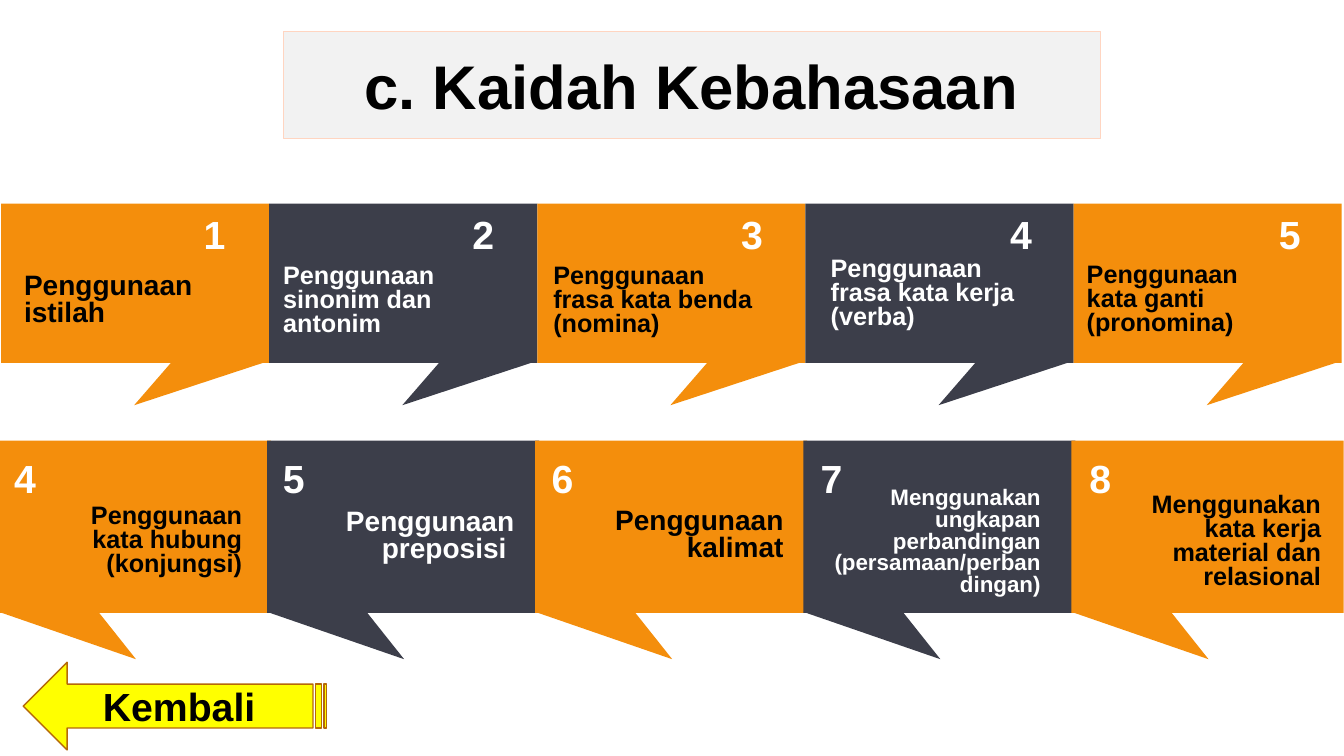
"""Builds the slide on language rules: two rows of numbered speech cards, a title and a back arrow."""
from dataclasses import dataclass

from pptx import Presentation
from pptx import util as u
from pptx.dml.color import RGBColor
from pptx.enum import shapes, text

WIDTH, HEIGHT = u.Inches(13.33), u.Inches(7.5)
ORANGE, SLATE, BLACK, WHITE = "F48E0C", "3C3E4A", "000000", "FFFFFF"
CARD_PITCH, NUMBER_PITCH, CAPTION_WIDTH = 19.95, 20, 16.88


@dataclass
class Area:
    """A rectangle in percent of the slide's width and height."""
    left: float
    top: float
    width: float
    height: float

    def box(self) -> tuple[int, int, int, int]:
        """Return the rectangle in slide units."""
        return across(self.left), down(self.top), across(self.width), down(self.height)


@dataclass
class Caption:
    """The wording of one card and where it stands."""
    words: str
    left: float
    top: float
    height: float
    size: int = 18


@dataclass
class Row:
    """A row of cards that share tail, numbering and alignment."""
    first_card: Area
    tail: list[tuple[float, float]]
    first_number: int
    number_left: float
    number_top: float
    align: text.PP_ALIGN
    captions: list[Caption]


ROWS = [
    Row(Area(0.08, 26.93, 19.95, 21.07),
        [(12.83, 20.67), (9.9, 26.67), (19.95, 20.8)],
        1, 14.18, 26.93, text.PP_ALIGN.LEFT, [
            Caption("Penggunaan istilah", 1.05, 35.6, 8.53, 20),
            Caption("Penggunaan sinonim dan antonim", 20.33, 34.4, 11.07),
            Caption("Penggunaan frasa kata benda (nomina)", 40.43, 34.4, 11.07),
            Caption("Penggunaan frasa kata kerja (verba)", 61.07, 33.47, 11.07),
            Caption("Penggunaan kata ganti (pronomina)", 80.12, 34.27, 11.07)]),
    Row(Area(-0.08, 58.27, 20.25, 22.8),
        [(7.28, 22.4), (10.2, 28.93), (0, 22.67)],
        4, 0.08, 59.2, text.PP_ALIGN.RIGHT, [
            Caption("Penggunaan kata hubung (konjungsi)", 1.88, 66.13, 11.07),
            Caption("Penggunaan preposisi ", 22.13, 66.8, 8.53, 20),
            Caption("Penggunaan kalimat", 42.16, 66.67, 8.53, 20),
            Caption("Menggunakan ungkapan perbandingan (persamaan/perbandingan)",
                    61.29, 64, 15.73, 16),
            Caption("Menggunakan kata kerja material dan relasional", 82.15, 64.67, 14.27)]),
]


def across(share: float) -> int:
    """Turn a percentage of the slide's width into a length."""
    return round(WIDTH * share / 100)


def down(share: float) -> int:
    """Turn a percentage of the slide's height into a length."""
    return round(HEIGHT * share / 100)


def paint(shape, fill: str, line: str | None = None, weight: float = 1) -> None:
    """Give a shape a flat fill and an optional outline."""
    shape.fill.solid()
    shape.fill.fore_color.rgb = RGBColor.from_string(fill)
    if line:
        shape.line.color.rgb = RGBColor.from_string(line)
        shape.line.width = u.Pt(weight)
    else:
        shape.line.fill.background()


def write(shape, words: str, size: int, color: str, align: text.PP_ALIGN,
          anchor=text.MSO_ANCHOR.MIDDLE, spacing: float = 1):
    """Set bold Arial text in a shape and return its frame."""
    frame = shape.text_frame
    frame.text = words
    frame.word_wrap = True
    frame.auto_size = text.MSO_AUTO_SIZE.NONE
    frame.vertical_anchor = anchor
    para = frame.paragraphs[0]
    para.alignment, para.line_spacing = align, spacing
    font = para.font
    font.name, font.size, font.bold = "Arial", u.Pt(size), True
    font.color.rgb = RGBColor.from_string(color)
    return frame


def draw_card(page, row: Row, column: int) -> None:
    """Draw one card with its tail, number and caption."""
    fill = SLATE if column % 2 else ORANGE
    first, caption = row.first_card, row.captions[column]
    left = first.left + column * CARD_PITCH
    body = page.shapes.add_shape(shapes.MSO_SHAPE.RECTANGLE,
                                 *Area(left, first.top, first.width, first.height).box())
    corners = [(across(left + x), down(first.top + y)) for x, y in row.tail]
    builder = page.shapes.build_freeform(*corners[0])
    builder.add_line_segments(corners[1:], close=True)
    for part in (body, builder.convert_to_shape()):
        part.shadow.inherit = False
        paint(part, fill)

    number_area = Area(row.number_left + column * NUMBER_PITCH, row.number_top, 3.68, 8.13)
    number = page.shapes.add_textbox(*number_area.box())
    frame = write(number, str(row.first_number + column), 28, WHITE,
                  text.PP_ALIGN.LEFT, text.MSO_ANCHOR.TOP)
    frame.word_wrap = False
    frame.margin_left = frame.margin_right = u.Inches(0.13)
    frame.margin_top = frame.margin_bottom = u.Inches(0.07)

    caption_area = Area(caption.left, caption.top, CAPTION_WIDTH, caption.height)
    write(page.shapes.add_textbox(*caption_area.box()), caption.words, caption.size,
          WHITE if fill == SLATE else BLACK, row.align, text.MSO_ANCHOR.TOP, 0.8)


def draw_title(page) -> None:
    """Place and format the title placeholder."""
    title = page.shapes.title
    title.left, title.top, title.width, title.height = Area(21.08, 4.13, 60.77, 14.13).box()
    paint(title, "F2F2F2", "FFD5C1", 0.75)
    write(title, "c. Kaidah Kebahasaan", 44, BLACK, text.PP_ALIGN.CENTER)


def draw_back_arrow(page) -> None:
    """Draw the striped arrow that points left."""
    arrow = page.shapes.add_shape(shapes.MSO_SHAPE.STRIPED_RIGHT_ARROW,
                                  *Area(1.73, 87.6, 22.58, 11.6).box())
    arrow.shadow.inherit = False
    arrow.element.spPr.xfrm.set("flipH", "1")
    paint(arrow, "FFFF00", "B56909")
    write(arrow, "Kembali", 28, BLACK, text.PP_ALIGN.CENTER)


def main() -> None:
    """Build and save the deck."""
    deck = Presentation()
    deck.slide_width, deck.slide_height = WIDTH, HEIGHT
    page = deck.slides.add_slide(deck.slide_layouts.get_by_name("Title Only"))
    draw_title(page)
    for row in ROWS:
        for column in range(len(row.captions)):
            draw_card(page, row, column)
    draw_back_arrow(page)
    deck.save("out.pptx")


if __name__ == "__main__":
    main()
